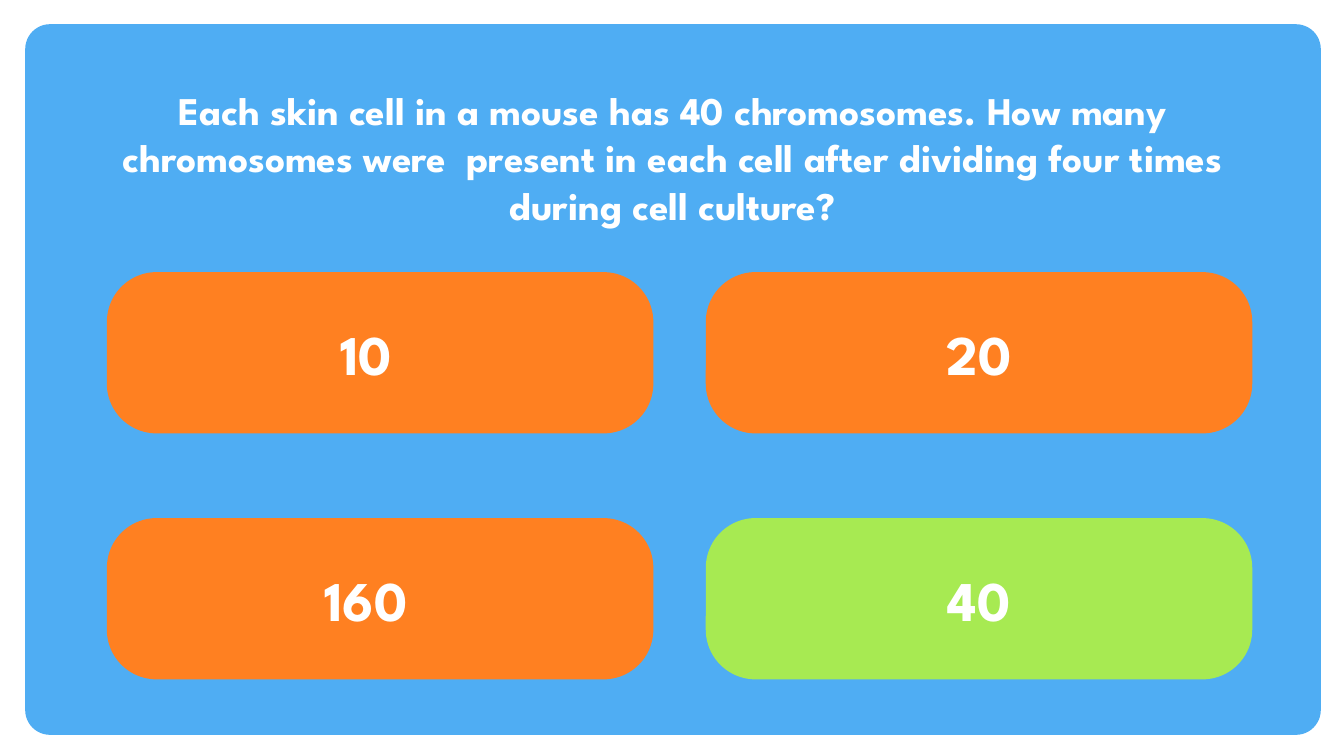
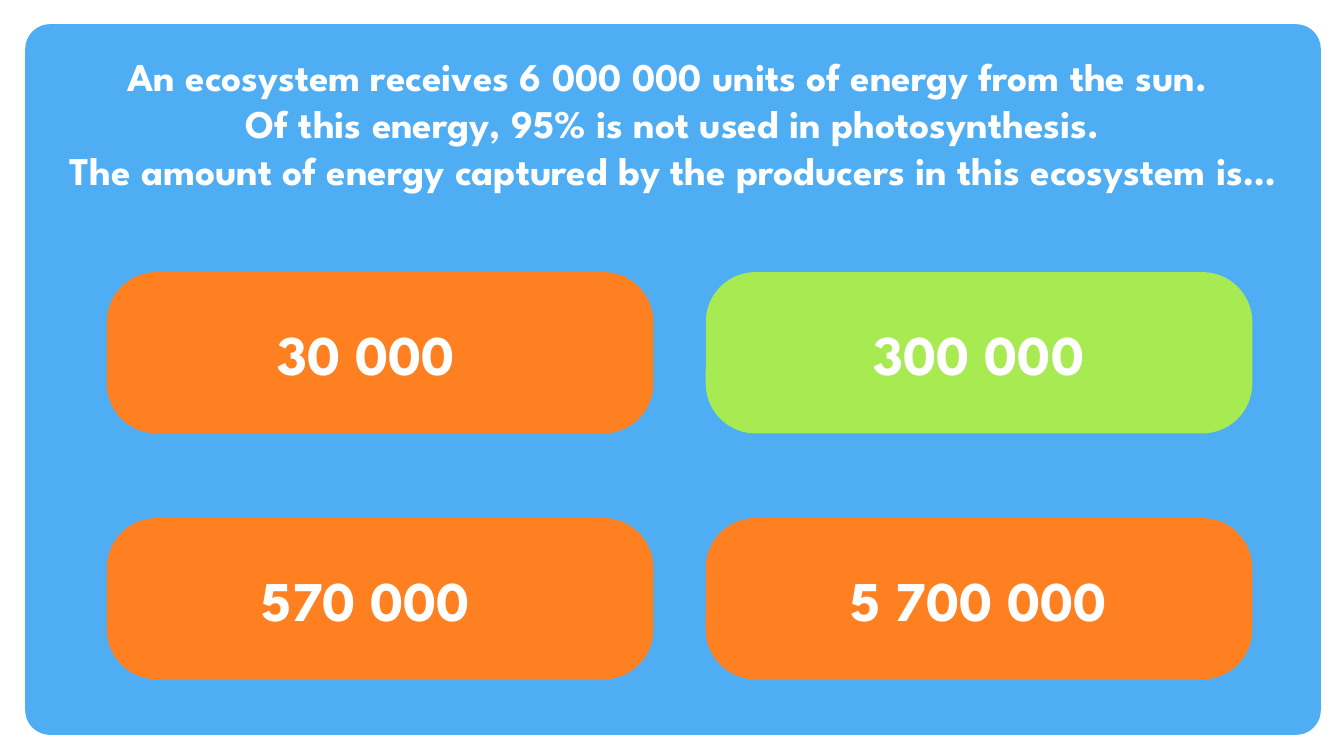
from dataclasses import dataclass

from pptx import Presentation
from pptx import util as u
from pptx.dml.color import RGBColor
from pptx.enum import shapes, text


@dataclass(frozen=True)
class Theme:
    panel: RGBColor = RGBColor.from_string("4FADF3")
    answer: RGBColor = RGBColor.from_string("FF8021")
    correct: RGBColor = RGBColor.from_string("A7EA52")
    ink: RGBColor = RGBColor.from_string("FFFFFF")
    font: str = "League Spartan"
    question_size: int = 28
    answer_size: int = 40


THEME = Theme()
PX = 9144  # EMU per px, 100 px to the inch


def add_rounded(page, bounds, corner, color):
    box = page.shapes.add_shape(
        shapes.MSO_SHAPE.ROUNDED_RECTANGLE, *[u.Emu(n * PX) for n in bounds])
    box.adjustments[0] = corner
    box.shadow.inherit = False
    box.fill.solid()
    box.fill.fore_color.rgb = color
    box.line.fill.background()
    return box


def write(box, words, size, anchor):
    frame = box.text_frame
    frame.text = words
    frame.word_wrap = True
    frame.auto_size = text.MSO_AUTO_SIZE.NONE
    frame.vertical_anchor = anchor
    for para in frame.paragraphs:
        para.alignment = text.PP_ALIGN.CENTER
        for span in para.runs:
            span.font.name = THEME.font
            span.font.size = u.Pt(size)
            span.font.bold = True
            span.font.color.rgb = THEME.ink


# Layout of every quiz slide
PANEL = (25, 24, 1285, 705)
ANSWER_W, ANSWER_H = 542, 160
ANSWER_LEFT, ANSWER_TOP = 106, 270
COLUMN_STEP, ROW_STEP = 594, 244
LEFT_COLUMN_INSET = 38  # shifts the left column's text off centre
RIGHT_COLUMN_INSET = 10

# Question, question bounds, answers row by row, correct answer
QUIZ = [
    ("Each skin cell in a mouse has 40 chromosomes. How many chromosomes "
     "were  present in each cell after dividing four times during cell culture?",
     (92, 81, 1150, 151), ["10", "20", "160", "40"], "40"),
    ("An ecosystem receives 6 000 000 units of energy from the sun. \n"
     "Of this energy, 95% is not used in photosynthesis.\n"
     "The amount of energy captured by the producers in this ecosystem is…",
     (46, 47, 1242, 199),
     ["30 000", "300 000", "570 000", "5 700 000"], "300 000"),
]

deck = Presentation()
deck.slide_width, deck.slide_height = u.Emu(1333 * PX), u.Emu(750 * PX)
title_only = deck.slide_layouts[5]

for question, bounds, answers, correct in QUIZ:
    page = deck.slides.add_slide(title_only)

    # Blue panel, behind the title
    panel = add_rounded(page, PANEL, 0.035, THEME.panel)
    title = page.shapes.title
    title._element.addprevious(panel._element)

    # Question
    title.left, title.top, title.width, title.height = [
        u.Emu(n * PX) for n in bounds]
    write(title, question, THEME.question_size, text.MSO_ANCHOR.TOP)

    # Two by two answers
    for index, words in enumerate(answers):
        row, column = divmod(index, 2)
        place = (ANSWER_LEFT + column * COLUMN_STEP,
                 ANSWER_TOP + row * ROW_STEP, ANSWER_W, ANSWER_H)
        color = THEME.correct if words == correct else THEME.answer
        box = add_rounded(page, place, 0.309, color)
        write(box, words, THEME.answer_size, text.MSO_ANCHOR.MIDDLE)
        inset = RIGHT_COLUMN_INSET if column else LEFT_COLUMN_INSET
        box.text_frame.margin_right = u.Emu(inset * PX)

deck.save("out.pptx")
